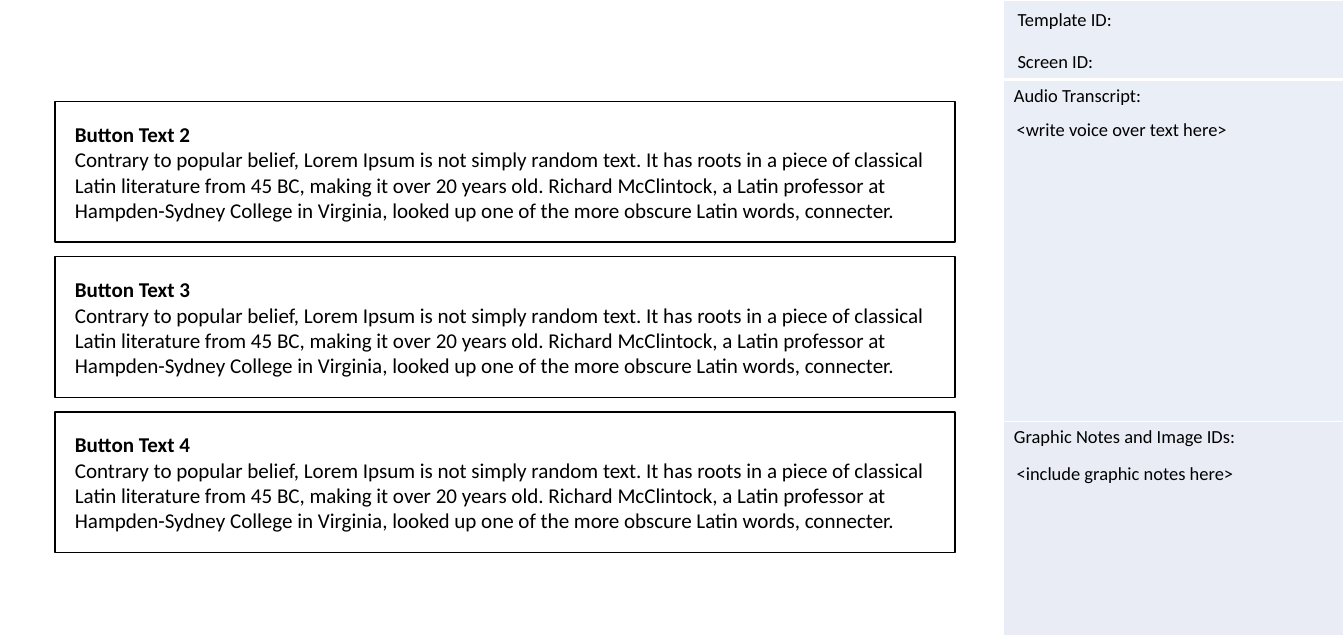
from lxml.etree import SubElement
from pptx import Presentation
from pptx.dml.color import RGBColor
from pptx.enum.shapes import MSO_SHAPE as Shape
from pptx.enum.text import MSO_ANCHOR as Anchor, PP_ALIGN as Align
from pptx.oxml.ns import qn
from pptx.util import Inches, Pt

BLACK, WHITE = "000000", "FFFFFF"
PALE_BLUE, PALE_LILAC = "EAEFF7", "E9EBF5"
BODY = (
    "Contrary to popular belief, Lorem Ipsum is not simply random text. "
    "It has roots in a piece of classical Latin literature from 45 BC, "
    "making it over 20 years old. Richard McClintock, a Latin professor at "
    "Hampden-Sydney College in Virginia, looked up one of the more obscure "
    "Latin words, connecter."
)
# Row height, label, fill, bottom border width in points
PANEL_ROWS = [
    (0.84, "", PALE_BLUE, 3),
    (3.6, "Audio Transcript:", PALE_BLUE, 1),
    (2.26, "Graphic Notes and Image IDs:", PALE_LILAC, 1),
]
# Left, top, wording
PANEL_LABELS = [
    (10.63, 0.48, "Screen ID:"),
    (10.63, 0.04, "Template ID:"),
    (10.62, 1.19, "<write voice over text here>"),
    (10.62, 4.82, "<include graphic notes here>"),
]
BUTTON_TITLES = ["Button Text 2", "Button Text 3", "Button Text 4"]
BUTTON_TOP, BUTTON_STEP = 1.07, 1.635


def color(value):
    return RGBColor.from_string(value)


def write(para, text, size, bold=False):
    para.text = text
    para.alignment = Align.LEFT
    para.font.size = Pt(size)
    for span in para.runs:
        span.font.name = "Calibri"
        span.font.size = Pt(size)
        span.font.bold = bold
        span.font.color.rgb = color(BLACK)


def set_borders(cell, bottom_width):
    properties = cell._tc.get_or_add_tcPr()
    widths = {"a:lnL": 1, "a:lnR": 1, "a:lnT": 1, "a:lnB": bottom_width}
    for tag, width in widths.items():
        line = SubElement(properties, qn(tag), w=str(Pt(width)))
        fill = SubElement(line, qn("a:solidFill"))
        SubElement(fill, qn("a:srgbClr"), val=WHITE)


def add_panel(slide):
    height = sum(row[0] for row in PANEL_ROWS)
    table = slide.shapes.add_table(
        len(PANEL_ROWS), 1, Inches(10.58), Inches(0), Inches(3.59), Inches(height)
    ).table
    table.first_row = table.horz_banding = False
    for index, (row_height, label, fill, bottom_width) in enumerate(PANEL_ROWS):
        table.rows[index].height = Inches(row_height)
        cell = table.cell(index, 0)
        cell.margin_left = cell.margin_right = Inches(0.11)
        cell.margin_top = cell.margin_bottom = Inches(0.05)
        write(cell.text_frame.paragraphs[0], label, 14)
        # Borders come before the fill in the cell properties
        set_borders(cell, bottom_width)
        cell.fill.solid()
        cell.fill.fore_color.rgb = color(fill)


def add_label(slide, left, top, text):
    box = slide.shapes.add_textbox(
        Inches(left), Inches(top), Inches(3.54), Inches(0.34)
    )
    box.text_frame.word_wrap = True
    write(box.text_frame.paragraphs[0], text, 14)


def add_button_box(slide, top, title):
    box = slide.shapes.add_shape(
        Shape.RECTANGLE, Inches(0.58), Inches(top), Inches(9.49), Inches(1.48)
    )
    box.shadow.inherit = False
    box.fill.solid()
    box.fill.fore_color.rgb = color(WHITE)
    box.line.color.rgb = color(BLACK)
    box.line.width = Pt(1)
    frame = box.text_frame
    frame.word_wrap = True
    frame.vertical_anchor = Anchor.TOP
    frame.margin_left = frame.margin_right = Inches(0.21)
    frame.margin_top = frame.margin_bottom = Inches(0.21)
    write(frame.paragraphs[0], title, 16, bold=True)
    write(frame.add_paragraph(), BODY, 16)


def main():
    deck = Presentation()
    deck.slide_width, deck.slide_height = Inches(14.17), Inches(6.69)
    slide = deck.slides.add_slide(deck.slide_layouts[6])

    # Notes panel on the right
    add_panel(slide)
    for left, top, text in PANEL_LABELS:
        add_label(slide, left, top, text)

    # Stacked button texts on the left
    for index, title in enumerate(BUTTON_TITLES):
        add_button_box(slide, BUTTON_TOP + index * BUTTON_STEP, title)

    deck.save("out.pptx")


if __name__ == "__main__":
    main()
